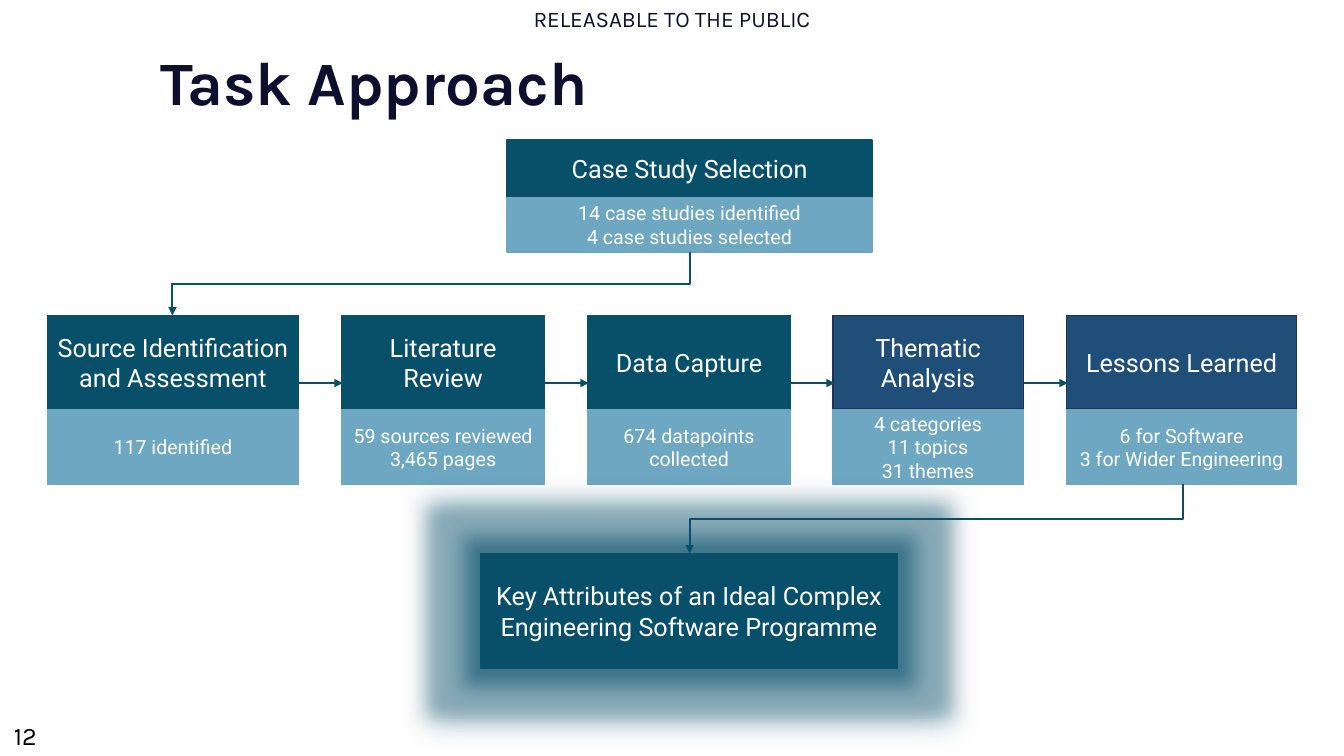
from lxml import etree
from pptx import Presentation
from pptx.dml.color import RGBColor
from pptx.enum.shapes import MSO_CONNECTOR as LINE, MSO_SHAPE as SHAPE
from pptx.enum.text import MSO_ANCHOR as ANCHOR, PP_ALIGN as ALIGN
from pptx.oxml import parse_xml
from pptx.oxml.ns import nsdecls, qn
from pptx.util import Pt

PX = 9144  # 100 px to the inch
TEAL, PALE, NAVY, EDGE = "084F6A", "6EA7C2", "1F4E79", "1E3256"
INK, WHITE, BLACK = "0E0E2F", "FFFFFF", "000000"


def rgb(code):
    return RGBColor.from_string(code)


def write(shape, lines, size, face, color, align=ALIGN.CENTER, bold=False):
    frame = shape.text_frame
    frame.word_wrap = True
    for i, line in enumerate(lines):
        para = frame.paragraphs[0] if i == 0 else frame.add_paragraph()
        para.alignment = align
        run = para.add_run()
        run.text = line
        run.font.size, run.font.name, run.font.bold = Pt(size), face, bold
        run.font.color.rgb = rgb(color)
    return para


deck = Presentation()
deck.slide_width, deck.slide_height = 1333 * PX, 750 * PX
slide = deck.slides.add_slide(deck.slide_layouts[5])
shapes = slide.shapes

# Title
title = shapes.title
title.left, title.top, title.width, title.height = 149 * PX, 43 * PX, 1093 * PX, 83 * PX
title.text_frame.vertical_anchor = ANCHOR.MIDDLE
write(title, ["Task Approach"], 44, "Karla", INK, ALIGN.LEFT, True).line_spacing = 0.9

# Marking and page number
for x, y, w, h, text, size, color in [
    (446, 0, 441, 37, "RELEASABLE TO THE PUBLIC", 16, INK),
    (-6, 710, 62, 40, "12", 18, BLACK),
]:
    label = shapes.add_textbox(x * PX, y * PX, w * PX, h * PX)
    write(label, [text], size, "Karla", color)

# Steps: left, top, width, head height, body height, head colours, texts
steps = [
    (503, 139, 362, 57, 54, TEAL, TEAL, "Case Study Selection",
     ["14 case studies identified", "4 case studies selected"]),
    (47, 313, 249, 93, 75, TEAL, TEAL, "Source Identification and Assessment",
     ["117 identified"]),
    (339, 313, 201, 93, 75, TEAL, TEAL, "Literature Review",
     ["59 sources reviewed", "3,465 pages"]),
    (583, 313, 201, 93, 75, TEAL, TEAL, "Data Capture",
     ["674 datapoints collected"]),
    (826, 313, 189, 93, 75, NAVY, EDGE, "Thematic Analysis",
     ["4 categories", "11 topics", "31 themes"]),
    (1058, 313, 228, 93, 75, NAVY, EDGE, "Lessons Learned",
     ["6 for Software", "3 for Wider Engineering"]),
    (477, 549, 413, 114, 0, TEAL, TEAL,
     "Key Attributes of an Ideal Complex Engineering Software Programme", []),
]
for x, y, w, head, body, fill, edge, name, facts in steps:
    parts = [(y, head, fill, edge, [name], 18)]
    if facts:
        parts.append((y + head, body, PALE, PALE, facts, 14))
    for top, h, tint, rim, lines, size in parts:
        box = shapes.add_shape(SHAPE.RECTANGLE, x * PX, top * PX, w * PX, h * PX)
        box.shadow.inherit = False
        box.fill.solid()
        box.fill.fore_color.rgb = rgb(tint)
        box.line.color.rgb = rgb(rim)
        box.line.width = Pt(1)
        box.text_frame.vertical_anchor = ANCHOR.MIDDLE
        write(box, lines, size, "Roboto", WHITE)

# Glow around the last box
props = box._element.spPr
props.replace(props.find(qn("a:effectLst")), parse_xml(
    f'<a:effectLst {nsdecls("a")}>'
    f'<a:glow rad="{36 * PX}"><a:srgbClr val="{TEAL}"><a:alpha val="40000"/></a:srgbClr></a:glow>'
    f'<a:outerShdw blurRad="{12 * PX}" sx="104000" sy="114000" algn="ctr" rotWithShape="0">'
    f'<a:srgbClr val="{TEAL}"><a:alpha val="40000"/></a:srgbClr></a:outerShdw>'
    '</a:effectLst>'))

# Arrows between steps
arrows = [(x, 380, x + 43, 380) for x in (297, 541, 785, 1016)]
arrows += [(684, 250, 171, 313), (1173, 480, 684, 549)]
for x1, y1, x2, y2 in arrows:
    if y1 == y2:
        arrow = shapes.add_connector(LINE.STRAIGHT, x1 * PX, y1 * PX, x2 * PX, y2 * PX)
    else:
        # A quarter turn makes the elbow leave and arrive vertically
        w, h = (y2 - y1) * PX, (x1 - x2) * PX
        left, top = ((x1 + x2) * PX - w) // 2, ((y1 + y2) * PX - h) // 2
        arrow = shapes.add_connector(LINE.ELBOW, left, top, left + w, top + h)
        arrow._element.spPr.find(qn("a:xfrm")).set("rot", "5400000")
    arrow.line.color.rgb = rgb(TEAL)
    arrow.line.width = Pt(1.5)
    etree.SubElement(arrow.line._get_or_add_ln(), qn("a:tailEnd"), type="triangle")
    etree.SubElement(arrow._element.spPr, qn("a:effectLst"))

deck.save("out.pptx")
